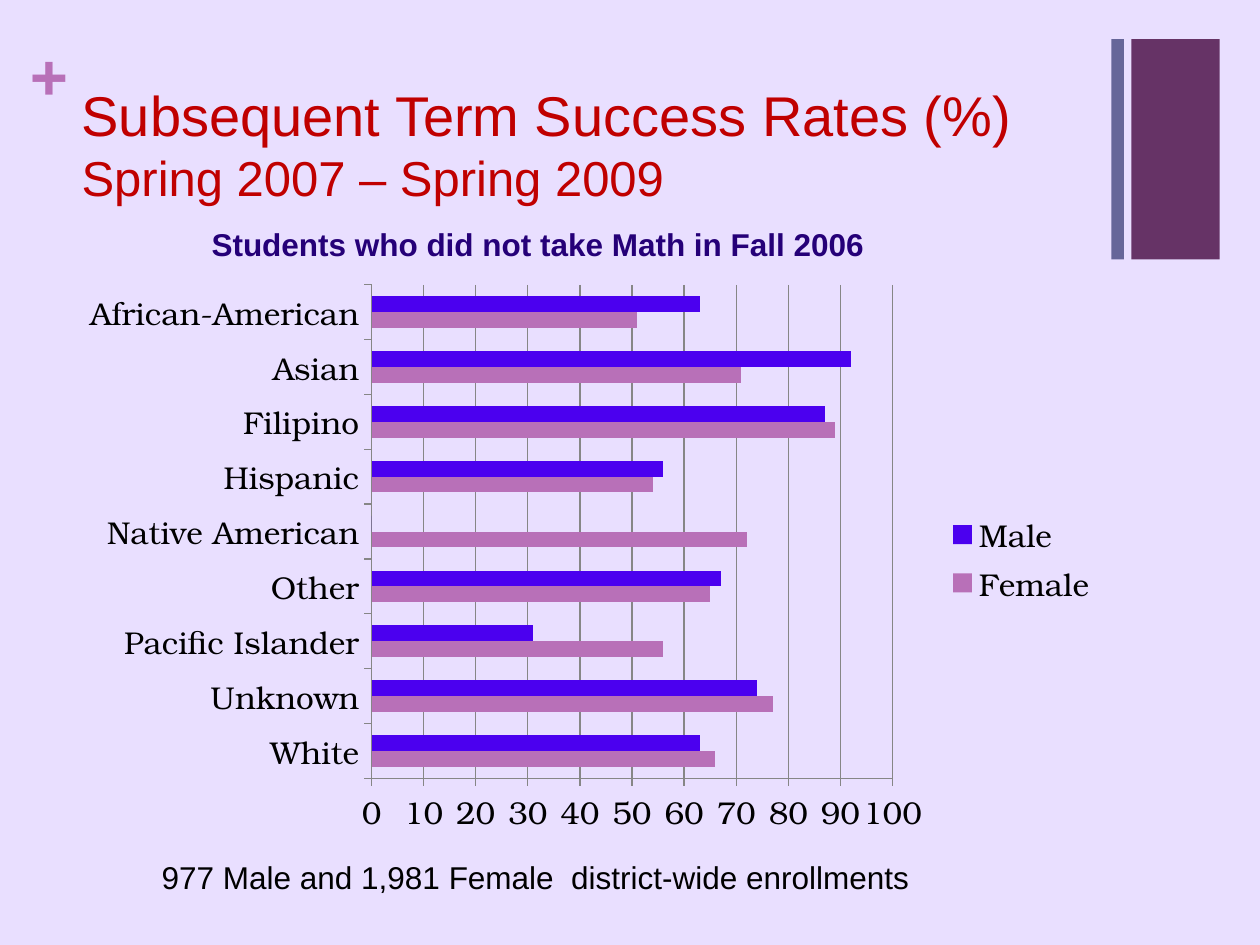
from pptx import Presentation
from pptx.chart.data import CategoryChartData
from pptx.dml.color import RGBColor
from pptx.enum.chart import XL_CHART_TYPE as Chart, XL_LEGEND_POSITION as Legend, XL_TICK_MARK as Tick
from pptx.enum.shapes import MSO_SHAPE as Shape
from pptx.enum.text import MSO_ANCHOR as Anchor, PP_ALIGN as Align
from pptx.util import Inches, Pt

THEME = {
    "sans": "Arial", "serif": "TeX Gyre Bonum",
    "background": "E9DFFF", "plum": "663366", "slate": "666699",
    "title": "C00000", "heading": "250078", "text": "000000",
    "male": "4B00EF", "female": "B870B8", "grid": "868686",
    "plus_size": 36, "title_size": 32, "subtitle_size": 28, "body_size": 18,
}
TITLE = "Subsequent Term Success Rates (%)"
PERIOD = "Spring 2007 – Spring 2009"
HEADING = "Students who did not take Math in Fall 2006"
ENROLLMENTS = "977 Male and 1,981 Female  district-wide enrollments"
RATES = [
    ("White", 66, 63), ("Unknown", 77, 74), ("Pacific Islander", 56, 31),
    ("Other", 65, 67), ("Native American", 72, 0), ("Hispanic", 54, 56),
    ("Filipino", 89, 87), ("Asian", 71, 92), ("African-American", 51, 63),
]
SERIES = ["Female", "Male"]
BANDS = [(8.98, 0.7, "plum"), (8.82, 0.1, "slate")]


def color(name):
    return RGBColor.from_string(THEME[name])


def style(font, size, fill, face="sans", bold=False):
    font.name, font.size, font.bold = THEME[face], Pt(THEME[size]), bold
    font.color.rgb = color(fill)


def add_run(p, text, *look):
    r = p.add_run()
    r.text = text
    style(r.font, *look)


def add_text(s, box, align=None, margin=None):
    tf = s.shapes.add_textbox(*map(Inches, box)).text_frame
    tf.word_wrap = True
    if margin is not None:
        tf.margin_left = tf.margin_right = tf.margin_top = tf.margin_bottom = margin
    tf.paragraphs[0].alignment = align
    return tf


def add_band(s, left, width, fill):
    sp = s.shapes.add_shape(Shape.RECTANGLE, *map(Inches, (left, 0.31, width, 1.75)))
    sp.shadow.inherit = False
    sp.fill.solid()
    sp.fill.fore_color.rgb = color(fill)
    sp.line.fill.background()


def add_rates(s):
    data = CategoryChartData()
    data.categories = [row[0] for row in RATES]
    for i, name in enumerate(SERIES, 1):
        data.add_series(name, [row[i] for row in RATES])
    box = map(Inches, (0.55, 2.17, 8.26, 4.53))
    chart = s.shapes.add_chart(Chart.BAR_CLUSTERED, *box, data).chart
    style(chart.font, "body_size", "text", "serif")
    chart.has_title = False
    chart.has_legend = True
    chart.legend.position = Legend.RIGHT
    chart.legend.include_in_layout = False
    plot = chart.plots[0]
    plot.gap_width, plot.overlap, plot.vary_by_categories = 150, 0, False
    for series in plot.series:
        series.format.fill.solid()
        series.format.fill.fore_color.rgb = color(series.name.lower())
    values = chart.value_axis
    values.minimum_scale, values.maximum_scale, values.major_unit = 0, 100, 10
    values.has_major_gridlines = True
    for axis in (chart.category_axis, values):
        axis.major_tick_mark = Tick.OUTSIDE
        axis.minor_tick_mark = Tick.NONE
    for part in (chart.category_axis, values, values.major_gridlines):
        part.format.line.color.rgb = color("grid")
        part.format.line.width = Pt(0.75)


def main():
    """Build the success rates slide."""
    prs = Presentation()
    prs.slide_width, prs.slide_height = Inches(10), Inches(7.5)
    s = prs.slides.add_slide(prs.slide_layouts[6])
    s.background.fill.solid()
    s.background.fill.fore_color.rgb = color("background")
    for band in BANDS:
        add_band(s, *band)

    plus = add_text(s, (0.24, 0.25, 0.29, 0.61), margin=0)
    plus.word_wrap = False
    add_run(plus.paragraphs[0], "+", "plus_size", "female", "serif", True)

    title = add_text(s, (0.55, 0.53, 8.26, 1.22))
    title.vertical_anchor = Anchor.MIDDLE
    p = title.paragraphs[0]
    add_run(p, TITLE, "title_size", "title")
    p.add_line_break()
    add_run(p, PERIOD, "subtitle_size", "title")

    add_rates(s)
    heading = add_text(s, (0, 1.74, 8.54, 0.4), Align.CENTER)
    add_run(heading.paragraphs[0], HEADING, "body_size", "heading", "sans", True)
    footer = add_text(s, (-0.02, 6.76, 8.54, 0.4), Align.CENTER)
    add_run(footer.paragraphs[0], ENROLLMENTS, "body_size", "text")
    prs.save("out.pptx")


if __name__ == "__main__":
    main()
